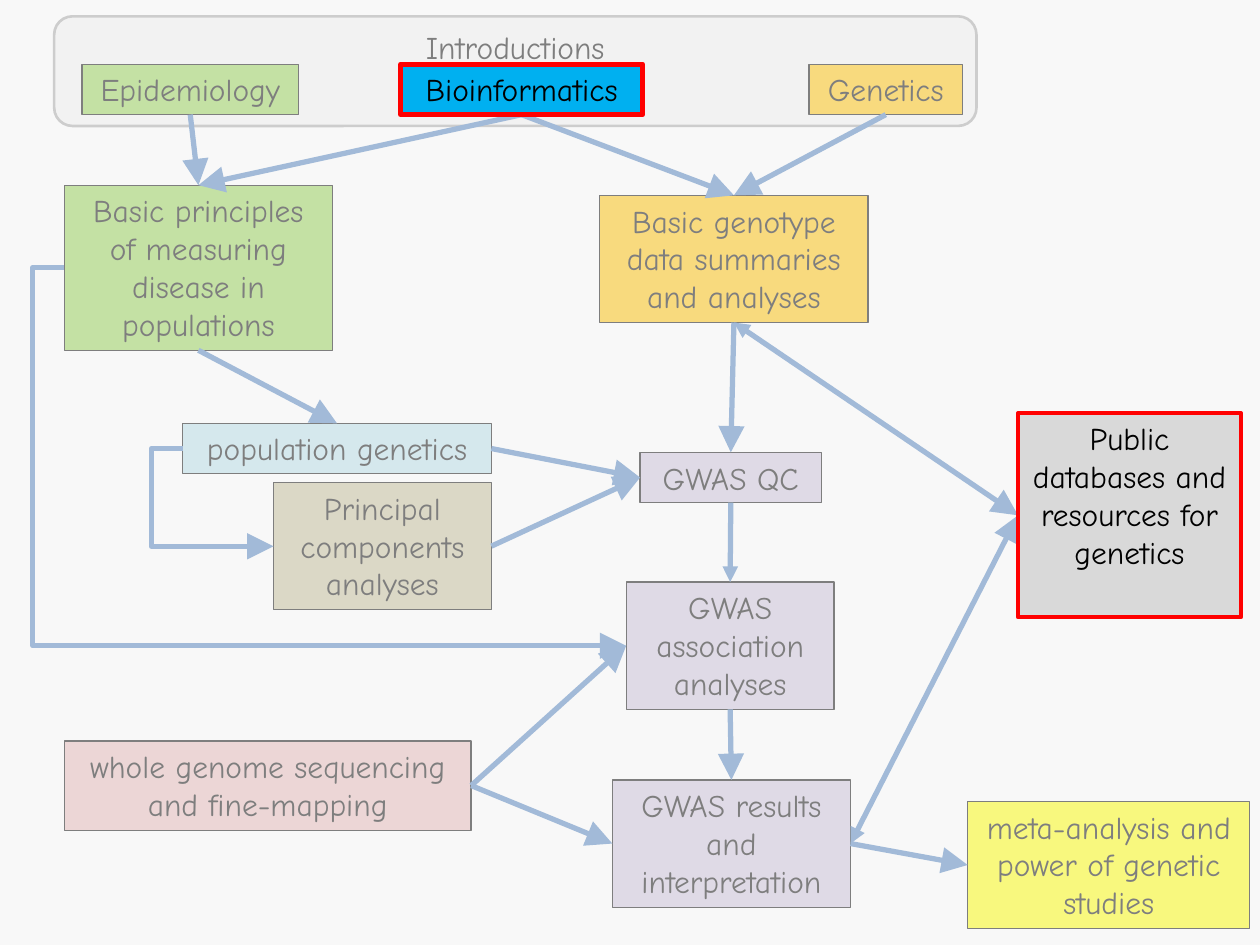
from lxml import etree
from pptx import Presentation
from pptx.dml.color import RGBColor
from pptx.enum.shapes import MSO_CONNECTOR, MSO_SHAPE
from pptx.enum.text import MSO_ANCHOR, PP_ALIGN
from pptx.oxml.ns import qn
from pptx.util import Inches, Pt

RECT, ROUND = MSO_SHAPE.RECTANGLE, MSO_SHAPE.ROUNDED_RECTANGLE
LINE, ELBOW = MSO_CONNECTOR.STRAIGHT, MSO_CONNECTOR.ELBOW
MID, TOP = PP_ALIGN.CENTER, MSO_ANCHOR.TOP
UP, LEFT, DOWN, RIGHT = range(4)
FONT = "Comic Neue"
GREEN, GOLD, LILAC = "92D050", "FFC000", "CCC1DA"
LOW, TALL = 0.4, 1.01
REACH = 0.25

BOXES = {
    "seq": ("whole genome sequencing and fine-mapping", 0.51, 5.88, 3.23, 0.71, "E6B9B8"),
    "meta": ("meta-analysis and power of genetic studies", 7.68, 6.36, 2.24, TALL, "FFFF00"),
    "gene": ("Genetics", 6.42, 0.51, 1.22, LOW, GOLD),
    "result": ("GWAS results and interpretation", 4.86, 6.19, 1.89, TALL, LILAC),
    "check": ("GWAS QC", 5.08, 3.59, 1.44, LOW, LILAC),
    "basic": ("Basic principles of measuring disease in populations", 0.51, 1.47, 2.13, 1.31, GREEN),
    "pop": ("population genetics", 1.45, 3.36, 2.45, LOW, "B7DEE8"),
    "pca": ("Principal components analyses", 2.17, 3.83, 1.73, TALL, "C4BD97"),
    "geno": ("Basic genotype data summaries and analyses", 4.76, 1.55, 2.13, TALL, GOLD),
    "assoc": ("GWAS association analyses", 4.97, 4.62, 1.65, TALL, LILAC),
    "epi": ("Epidemiology", 0.65, 0.51, 1.72, LOW, GREEN),
    "bio": ("Bioinformatics", 3.18, 0.51, 1.92, LOW, "00B0F0"),
    "public": ("Public databases and resources for genetics", 8.08, 3.28, 1.77, 1.62, "D9D9D9"),
}
FOCUS = {"bio": 3, "public": 2.25}

LINKS = [
    ("gene", DOWN, "geno", UP),
    ("epi", DOWN, "basic", UP),
    ("bio", DOWN, "geno", UP),
    ("bio", DOWN, "basic", UP),
    ("geno", DOWN, "check", UP),
    ("check", DOWN, "assoc", UP),
    ("assoc", DOWN, "result", UP),
    ("result", RIGHT, "meta", LEFT),
    ("result", RIGHT, "public", LEFT),
    ("geno", DOWN, "public", LEFT),
    ("pop", RIGHT, "check", LEFT),
    ("pca", RIGHT, "check", LEFT),
    ("seq", RIGHT, "assoc", LEFT),
    ("seq", RIGHT, "result", LEFT),
    ("basic", DOWN, "pop", UP),
    ("pop", LEFT, "pca", LEFT),
    ("basic", LEFT, "assoc", LEFT),
]


def color(code):
    return RGBColor.from_string(code)


def add_box(slide, text, x, y, w, h, fill, edge="000000", width=0.75, kind=RECT):
    box = slide.shapes.add_shape(kind, Inches(x), Inches(y), Inches(w), Inches(h))
    box.shadow.inherit = False
    box.fill.solid()
    box.fill.fore_color.rgb = color(fill)
    if edge:
        box.line.color.rgb = color(edge)
        box.line.width = Pt(width)
    else:
        box.line.fill.background()
    if text:
        frame = box.text_frame
        frame.text = text
        frame.word_wrap = h > LOW
        frame.vertical_anchor = TOP
        para = frame.paragraphs[0]
        para.alignment = MID
        font = para.runs[0].font
        font.name, font.size = FONT, Pt(18)
        font.color.rgb = color("000000")
    return box


def add_head(line, end, size):
    etree.SubElement(line, qn("a:" + end), type="triangle", w=size, len=size)


def bend(link):
    props = link._element.spPr
    frame = props.find(qn("a:xfrm"))
    for key, value in (("rot", "10800000"), ("flipH", "1"), ("flipV", "1")):
        frame.set(key, value)
    ratio = round(-REACH * Inches(1) / link.width * 100000)
    guides = props.find(qn("a:prstGeom")).find(qn("a:avLst"))
    etree.SubElement(guides, qn("a:gd"), name="adj1", fmla=f"val {ratio}")


def add_link(slide, boxes, start, exit, goal, entry):
    kind = ELBOW if exit == entry == LEFT else LINE
    link = slide.shapes.add_connector(kind, 0, 0, 0, 0)
    link.begin_connect(boxes[start], exit)
    link.end_connect(boxes[goal], entry)
    link.line.color.rgb = color("4B7EBC")
    link.line.width = Pt(3)
    line = link.line._get_or_add_ln()
    if goal == "public":
        add_head(line, "headEnd", "med")
    add_head(line, "tailEnd", "med" if start == "check" else "lg")
    etree.SubElement(link._element.spPr, qn("a:effectLst"))
    if kind == ELBOW:
        bend(link)


def main():
    deck = Presentation()
    deck.slide_width, deck.slide_height = Inches(10), Inches(7.5)
    slide = deck.slides.add_slide(deck.slide_layouts[6])

    add_box(slide, "Introductions", 0.43, 0.13, 7.32, 0.87, "F2F2F2", "A6A6A6", 1.5, ROUND)
    boxes = {}
    for name, spec in BOXES.items():
        edge = ("FF0000", FOCUS[name]) if name in FOCUS else ()
        boxes[name] = add_box(slide, *spec, *edge)
    for link in LINKS:
        add_link(slide, boxes, *link)

    veil = add_box(slide, "", 0, -0.03, 10, 7.53, "F2F2F2", None)
    tint = veil._element.spPr.find(qn("a:solidFill"))[0]
    etree.SubElement(tint, qn("a:alpha"), val="52000")
    for name in FOCUS:
        veil._element.getparent().append(boxes[name]._element)

    deck.save("out.pptx")


if __name__ == "__main__":
    main()
